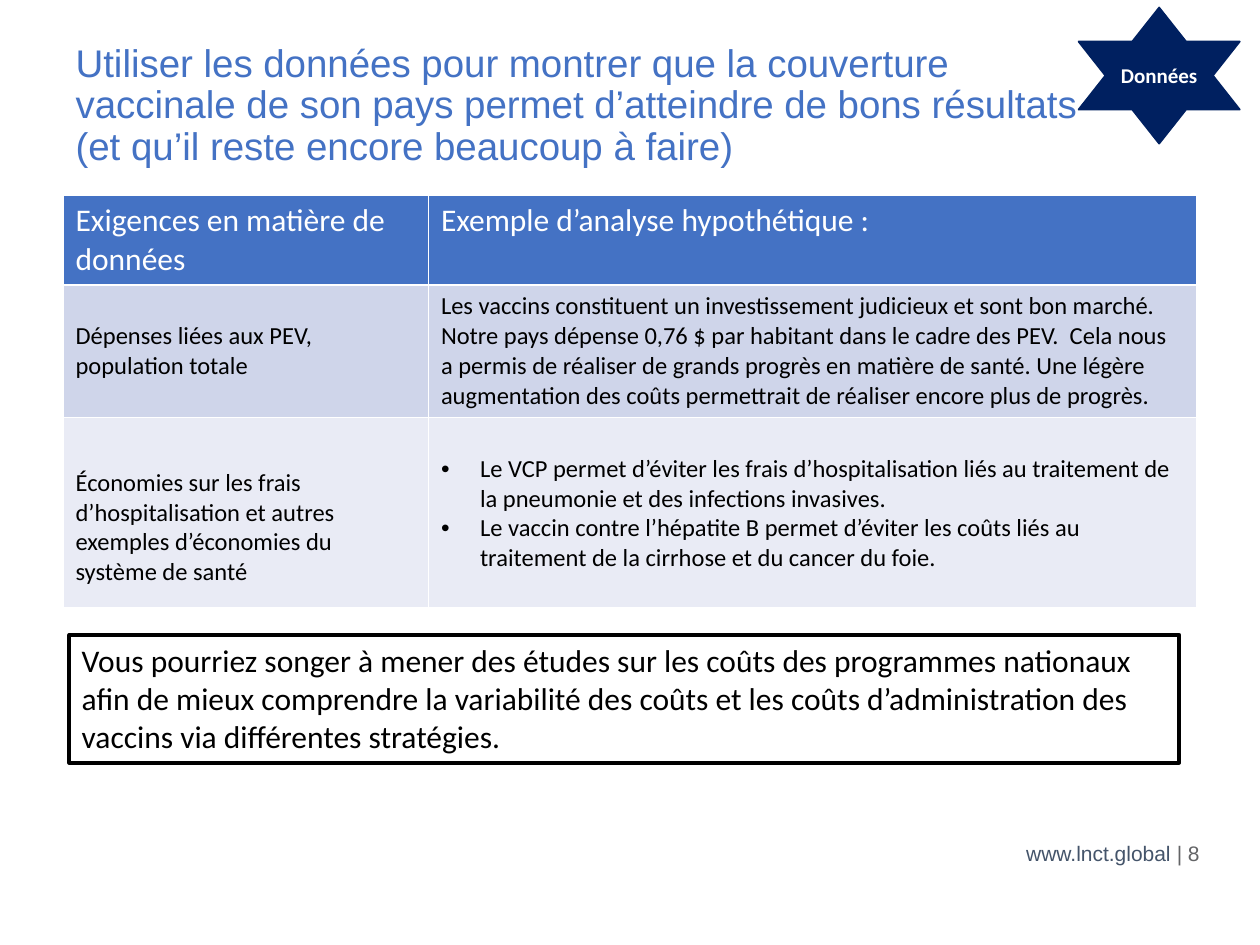
from dataclasses import dataclass
from typing import Any

from lxml.etree import SubElement
from pptx import Presentation
from pptx.dml.color import RGBColor
from pptx.enum.shapes import MSO_SHAPE
from pptx.enum.text import MSO_ANCHOR, MSO_AUTO_SIZE, PP_ALIGN
from pptx.oxml import parse_xml
from pptx.oxml.ns import nsdecls, qn
from pptx.util import Inches, Pt


@dataclass(frozen=True)
class Theme:
    blue: str = "4472C4"
    band_dark: str = "CFD5EA"
    band_light: str = "E9EBF5"
    navy: str = "002060"
    slate: str = "44546A"
    grey: str = "636466"
    white: str = "FFFFFF"
    black: str = "000000"
    heading: str = "Arial"
    body: str = "Calibri"
    title_size: int = 22
    large: int = 18
    medium: int = 14
    small: int = 12


@dataclass(frozen=True)
class Style:
    size: int
    color: str
    font: str
    bold: bool = False


@dataclass(frozen=True)
class Box:
    """Left, top, width and height as shares of the slide."""
    left: float
    top: float
    width: float
    height: float

    def place(self) -> tuple[int, int, int, int]:
        return (int(self.left * SLIDE_WIDTH), int(self.top * SLIDE_HEIGHT),
                int(self.width * SLIDE_WIDTH), int(self.height * SLIDE_HEIGHT))


@dataclass(frozen=True)
class Row:
    height: float
    cells: tuple[tuple[str, ...], ...]
    fill: str
    style: Style
    anchors: tuple[MSO_ANCHOR, MSO_ANCHOR]
    margin_top: float = 0.05


THEME = Theme()
SLIDE_WIDTH, SLIDE_HEIGHT = Inches(10), Inches(7.5)
COLUMN_SHARES = (0.29, 0.61)
HEADER_STYLE = Style(THEME.large, THEME.white, THEME.body)
CELL_STYLE = Style(THEME.medium, THEME.black, THEME.body)
TOP_TOP = (MSO_ANCHOR.TOP, MSO_ANCHOR.TOP)
MIDDLE_TOP = (MSO_ANCHOR.MIDDLE, MSO_ANCHOR.TOP)

ROWS = (
    Row(0.71, (("Exigences en matière de données",),
               ("Exemple d’analyse hypothétique :",)),
        THEME.blue, HEADER_STYLE, TOP_TOP),
    Row(1.05, (("Dépenses liées aux PEV, population totale",),
               ("Les vaccins constituent un investissement judicieux et sont bon marché.  "
                "Notre pays dépense 0,76 $ par habitant dans le cadre des PEV.  Cela nous "
                "a permis de réaliser de grands progrès en matière de santé. Une légère "
                "augmentation des coûts permettrait de réaliser encore plus de progrès.",)),
        THEME.band_dark, CELL_STYLE, MIDDLE_TOP),
    Row(1.51, (("Économies sur les frais d’hospitalisation et autres exemples "
                "d’économies du système de santé",),
               ("Le VCP permet d’éviter les frais d’hospitalisation liés au traitement "
                "de la pneumonie et des infections invasives.",
                "Le vaccin contre l’hépatite B permet d’éviter les coûts liés au "
                "traitement de la cirrhose et du cancer du foie.")),
        THEME.band_light, CELL_STYLE, MIDDLE_TOP, 0.29),
)


def apply(target: Any, values: dict[str, Any]) -> None:
    for name, value in values.items():
        setattr(target, name, value)


def add_run(paragraph: Any, text: str, style: Style) -> None:
    run = paragraph.add_run()
    run.text = text
    apply(run.font, {"size": Pt(style.size), "name": style.font, "bold": style.bold})
    run.font.color.rgb = RGBColor.from_string(style.color)


def add_bullet(paragraph: Any) -> None:
    properties = paragraph._p.get_or_add_pPr()
    indent = Inches(0.31)
    properties.set("marL", str(indent))
    properties.set("indent", str(-indent))
    SubElement(properties, qn("a:buFont"), typeface="Arial")
    SubElement(properties, qn("a:buChar"), char="•")


def set_borders(cell: Any, color: str) -> None:
    properties = cell._tc.get_or_add_tcPr()
    for position, side in enumerate(("lnL", "lnR", "lnT", "lnB")):
        properties.insert(position, parse_xml(
            f'<a:{side} {nsdecls("a")} w="{Pt(1)}"><a:solidFill>'
            f'<a:srgbClr val="{color}"/></a:solidFill></a:{side}>'))


def fill_cell(cell: Any, texts: tuple[str, ...], row: Row, anchor: MSO_ANCHOR) -> None:
    apply(cell, {"vertical_anchor": anchor, "margin_top": Inches(row.margin_top)})
    cell.fill.solid()
    cell.fill.fore_color.rgb = RGBColor.from_string(row.fill)
    set_borders(cell, THEME.white)
    frame = cell.text_frame
    for index, text in enumerate(texts):
        paragraph = frame.add_paragraph() if index else frame.paragraphs[0]
        if len(texts) > 1:
            add_bullet(paragraph)
        add_run(paragraph, text, row.style)


def add_data_table(slide: Any, box: Box) -> None:
    table = slide.shapes.add_table(len(ROWS), len(COLUMN_SHARES), *box.place()).table
    for column, share in zip(table.columns, COLUMN_SHARES):
        column.width = int(share * SLIDE_WIDTH)
    for row_index, row in enumerate(ROWS):
        table.rows[row_index].height = Inches(row.height)
        for column_index, texts in enumerate(row.cells):
            fill_cell(table.cell(row_index, column_index), texts, row,
                      row.anchors[column_index])


def add_label_shape(slide: Any, kind: MSO_SHAPE, box: Box, text: str, style: Style,
                    line: tuple[str, float], fill: str | None,
                    frame_format: dict[str, Any], alignment: PP_ALIGN) -> None:
    shape = slide.shapes.add_shape(kind, *box.place())
    shape.shadow.inherit = False
    if fill:
        shape.fill.solid()
        shape.fill.fore_color.rgb = RGBColor.from_string(fill)
    else:
        shape.fill.background()
    shape.line.color.rgb = RGBColor.from_string(line[0])
    shape.line.width = Pt(line[1])
    apply(shape.text_frame, {"word_wrap": True, **frame_format})
    paragraph = shape.text_frame.paragraphs[0]
    paragraph.alignment = alignment
    add_run(paragraph, text, style)


def main() -> None:
    presentation = Presentation()
    apply(presentation, {"slide_width": SLIDE_WIDTH, "slide_height": SLIDE_HEIGHT})
    slide = presentation.slides.add_slide(presentation.slide_layouts[5])

    # Title
    title = slide.shapes.title
    apply(title, dict(zip(("left", "top", "width", "height"),
                          Box(0.05, 0.04, 0.843, 0.167).place())))
    apply(title.text_frame, {"vertical_anchor": MSO_ANCHOR.TOP, "word_wrap": True,
                             "auto_size": MSO_AUTO_SIZE.NONE})
    heading = title.text_frame.paragraphs[0]
    apply(heading, {"alignment": PP_ALIGN.LEFT, "line_spacing": 0.9})
    add_run(heading, "Utiliser les données pour montrer que la couverture vaccinale de son "
            "pays permet d’atteindre de bons résultats (et qu’il reste encore beaucoup "
            "à faire)", Style(THEME.title_size, THEME.blue, THEME.heading))

    # Data requirements and example analysis
    add_data_table(slide, Box(0.05, 0.207, 0.9, 0.436))

    # Footer with page number
    footer = slide.shapes.add_textbox(*Box(0.729, 0.876, 0.233, 0.053).place())
    apply(footer.text_frame, {"word_wrap": True, "vertical_anchor": MSO_ANCHOR.MIDDLE})
    paragraph = footer.text_frame.paragraphs[0]
    paragraph.alignment = PP_ALIGN.RIGHT
    for text, color in (("www.lnct.global ", THEME.slate), ("| 8", THEME.grey)):
        add_run(paragraph, text, Style(THEME.small, color, THEME.heading))

    # Star badge and closing advice
    add_label_shape(slide, MSO_SHAPE.STAR_6_POINT, Box(0.856, 0.008, 0.128, 0.144),
                    "Données", Style(THEME.small, THEME.white, THEME.body, True),
                    (THEME.navy, 1), THEME.navy,
                    {"vertical_anchor": MSO_ANCHOR.MIDDLE, "margin_left": 0,
                     "margin_right": 0}, PP_ALIGN.CENTER)
    add_label_shape(slide, MSO_SHAPE.RECTANGLE, Box(0.055, 0.672, 0.881, 0.135),
                    "Vous pourriez songer à mener des études sur les coûts des programmes "
                    "nationaux afin de mieux comprendre la variabilité des coûts et les "
                    "coûts d’administration des vaccins via différentes stratégies.",
                    Style(THEME.large, THEME.black, THEME.body), (THEME.black, 2.25), None,
                    {"vertical_anchor": MSO_ANCHOR.TOP,
                     "auto_size": MSO_AUTO_SIZE.SHAPE_TO_FIT_TEXT}, PP_ALIGN.LEFT)

    presentation.save("out.pptx")


if __name__ == "__main__":
    main()
